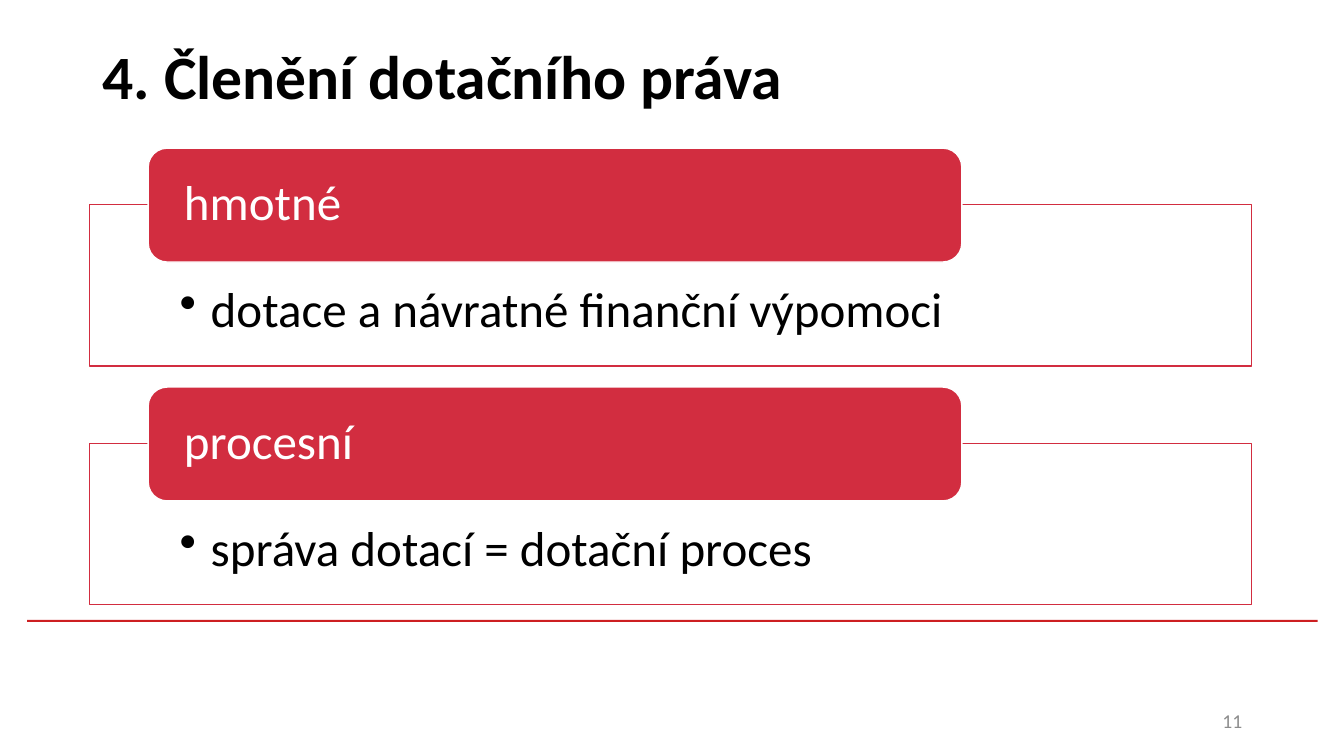
from dataclasses import dataclass
from lxml.etree import SubElement
from pptx import Presentation
from pptx.dml.color import RGBColor
from pptx.enum.shapes import MSO_SHAPE
from pptx.enum.text import MSO_ANCHOR, PP_ALIGN
from pptx.oxml.ns import qn
from pptx.util import Inches, Pt


@dataclass(frozen=True)
class Theme:
    font: str = "Calibri"
    red: str = "D22D40"
    rule: str = "CD1F21"
    white: str = "FFFFFF"
    black: str = "000000"
    gray: str = "8C8C8C"
    title: int = 44
    body: int = 35
    small: int = 14


THEME = Theme()
PARTS = [
    ("hmotné", "dotace a návratné finanční výpomoci"),
    ("procesní", "správa dotací = dotační proces"),
]


def add_bullet(para):
    props = para._p.get_or_add_pPr()
    props.set("marL", str(Inches(0.31)))
    props.set("indent", str(Inches(-0.31)))
    SubElement(props, qn("a:buChar")).set("char", "•")


def put_text(shape, text, size, color, bold=False, align=PP_ALIGN.LEFT,
             anchor=MSO_ANCHOR.MIDDLE, inset=(0.1, 0.05, 0.1, 0.05),
             space=1.0, bullet=False):
    frame = shape.text_frame
    frame.word_wrap = True
    frame.vertical_anchor = anchor
    (frame.margin_left, frame.margin_top,
     frame.margin_right, frame.margin_bottom) = map(Inches, inset)
    para = frame.paragraphs[0]
    para.text = text
    para.alignment = align
    para.line_spacing = space
    if bullet:
        add_bullet(para)
    font = para.runs[0].font
    font.name = THEME.font
    font.size = Pt(size)
    font.bold = bold
    font.color.rgb = RGBColor.from_string(color)


def add_label(slide, box, text, size, color, **style):
    put_text(slide.shapes.add_textbox(*map(Inches, box)),
             text, size, color, **style)


def add_block(slide, kind, box, fill, line=None):
    shape = slide.shapes.add_shape(kind, *map(Inches, box))
    shape.shadow.inherit = False
    shape.fill.solid()
    shape.fill.fore_color.rgb = RGBColor.from_string(fill)
    if line:
        shape.line.color.rgb = RGBColor.from_string(line)
        shape.line.width = Pt(1)
    else:
        shape.line.fill.background()
    return shape


def add_part(slide, top, head, point):
    panel = add_block(slide, MSO_SHAPE.RECTANGLE, (0.89, top + 0.56, 11.52, 1.6),
                      THEME.white, THEME.red)
    put_text(panel, point, THEME.body, THEME.black, anchor=MSO_ANCHOR.TOP,
             inset=(0.89, 0.8, 0.89, 0.27), space=0.9, bullet=True)
    tab = add_block(slide, MSO_SHAPE.ROUNDED_RECTANGLE, (1.47, top, 8.07, 1.13),
                    THEME.red, THEME.white)
    put_text(tab, head, THEME.body, THEME.white,
             inset=(0.3, 0, 0.3, 0), space=0.9)


def main():
    deck = Presentation()
    deck.slide_width = Inches(13.33)
    deck.slide_height = Inches(7.5)
    slide = deck.slides.add_slide(deck.slide_layouts[6])
    add_block(slide, MSO_SHAPE.RECTANGLE, (0.27, 6.15, 12.8, 0.02), THEME.rule)
    add_label(slide, (0.92, 0.02, 11.5, 1.45), "4. Členění dotačního práva",
              THEME.title, THEME.black, bold=True)
    add_label(slide, (9.42, 6.95, 3, 0.4), "11", THEME.small, THEME.gray,
              align=PP_ALIGN.RIGHT)
    for row, (head, point) in enumerate(PARTS):
        add_part(slide, 1.47 + row * 2.37, head, point)
    deck.save("out.pptx")


if __name__ == "__main__":
    main()
